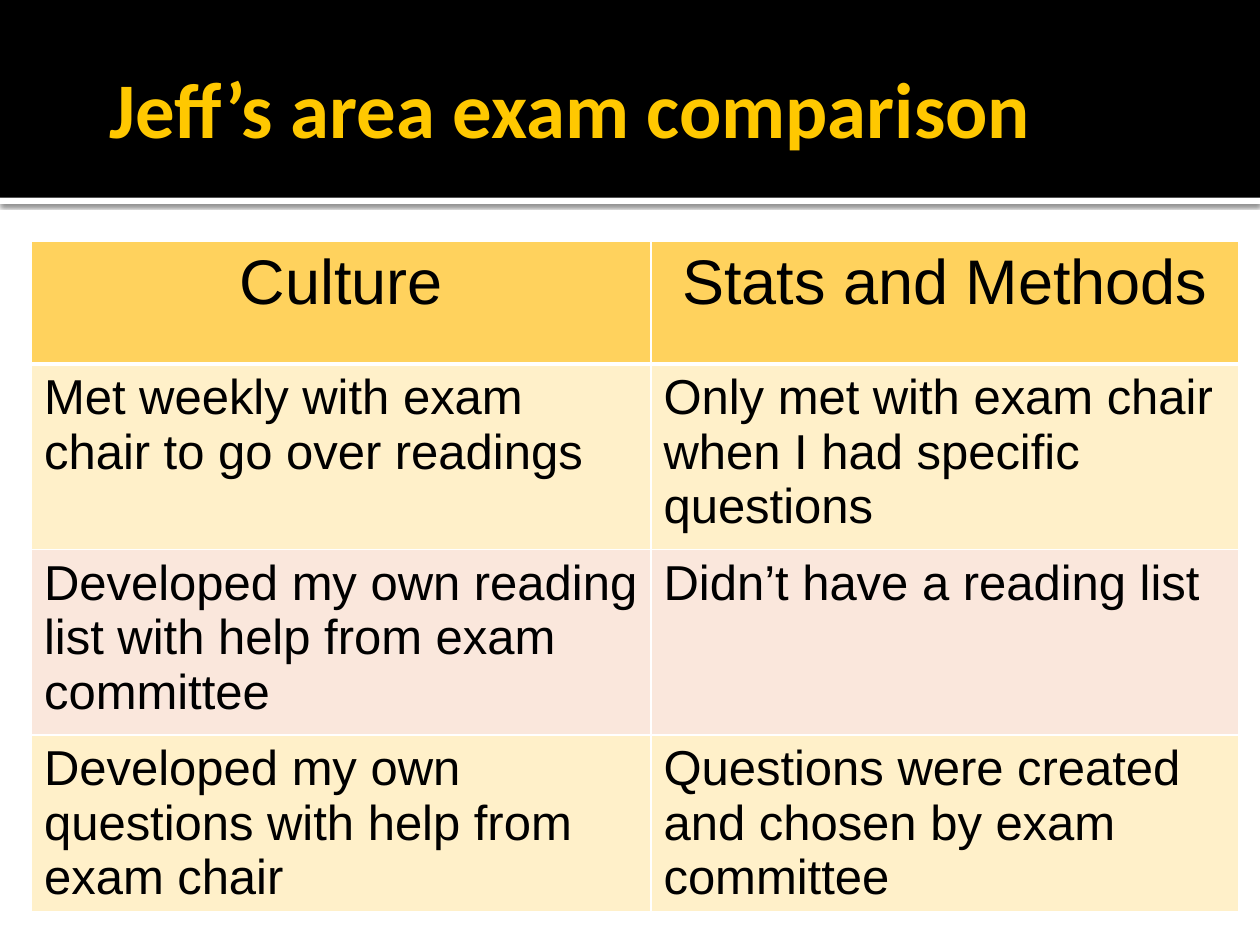
from dataclasses import dataclass

from pptx import Presentation
from pptx.dml.color import RGBColor as Color
from pptx.enum.shapes import MSO_SHAPE as Shape
from pptx.enum.text import MSO_ANCHOR as Anchor, MSO_AUTO_SIZE as AutoSize, PP_ALIGN as Align
from pptx.oxml import parse_xml
from pptx.oxml.ns import nsdecls
from pptx.util import Pt


@dataclass(frozen=True)
class Theme:
    white: str = "FFFFFF"
    black: str = "000000"
    title: str = "FFC800"
    header: str = "FFD25D"
    bands: tuple = ("FFF0C9", "FAE7DC")
    title_font: str = "Calibri"
    table_font: str = "Arial"
    title_size: float = 45
    header_size: float = 36
    body_size: float = 28


THEME = Theme()
HEADERS = ("Culture", "Stats and Methods")
COMPARISONS = (
    ("Met weekly with exam chair to go over readings",
     "Only met with exam chair when I had specific questions"),
    ("Developed my own reading list with help from exam committee",
     "Didn’t have a reading list"),
    ("Developed my own questions with help from exam chair",
     "Questions were created and chosen by exam committee"),
)


def write(frame, text, *, font, size, color, bold=False, align=Align.LEFT):
    para = frame.paragraphs[0]
    para.alignment = align
    span = para.add_run()
    span.text = text
    span.font.name = font
    span.font.size = Pt(size)
    span.font.bold = bold
    span.font.color.rgb = Color.from_string(color)


def set_borders(cell, color, **widths):
    """Draw the sides L, R, T and B in the given point widths; 0 hides a side."""
    properties = cell._tc.get_or_add_tcPr()
    for index, side in enumerate("LRTB"):
        width = widths.get(side, 1)
        fill = (f'<a:solidFill><a:srgbClr val="{color}"/></a:solidFill>'
                if width else "<a:noFill/>")
        properties.insert(index, parse_xml(
            f'<a:ln{side} {nsdecls("a")} w="{Pt(width)}">{fill}</a:ln{side}>'))


class SlideBuilder:
    def __init__(self, deck, theme):
        self.theme = theme
        self.slide = deck.slides.add_slide(deck.slide_layouts[5])

    def band(self, top, height, color, shadow=False):
        """Add a full-width stripe behind the title."""
        shapes = self.slide.shapes
        box = shapes.add_shape(Shape.RECTANGLE, 0, Pt(top), Pt(720), Pt(height))
        box.fill.solid()
        box.fill.fore_color.rgb = Color.from_string(color)
        box.line.fill.background()
        box.shadow.inherit = False
        if shadow:
            effects = box._element.spPr.find(".//{*}effectLst")
            effects.append(parse_xml(
                f'<a:outerShdw {nsdecls("a")} blurRad="{Pt(2.5)}" dist="{Pt(0.8)}" '
                f'dir="5400000" rotWithShape="0"><a:srgbClr val="{self.theme.black}">'
                '<a:alpha val="60000"/></a:srgbClr></a:outerShdw>'))
        shapes.title._element.addprevious(box._element)

    def title(self, text, left, top, width, height):
        box = self.slide.shapes.title
        box.left, box.top, box.width, box.height = map(Pt, (left, top, width, height))
        frame = box.text_frame
        frame.word_wrap = True
        frame.auto_size = AutoSize.NONE
        frame.vertical_anchor = Anchor.MIDDLE
        frame.margin_left = Pt(7.2)
        frame.margin_top = frame.margin_right = frame.margin_bottom = Pt(3.6)
        write(frame, text, font=self.theme.title_font, size=self.theme.title_size,
              color=self.theme.title, bold=True, align=Align.CENTER)

    def table(self, rows, left, top, widths, heights):
        theme = self.theme
        table = self.slide.shapes.add_table(
            len(rows), len(widths), Pt(left), Pt(top),
            Pt(sum(widths)), Pt(sum(heights))).table
        for column, width in zip(table.columns, widths):
            column.width = Pt(width)
        for row, height in zip(table.rows, heights):
            row.height = Pt(height)
        for row_index, texts in enumerate(rows):
            is_header = row_index == 0
            fill = theme.header if is_header else theme.bands[(row_index - 1) % 2]
            for column_index, text in enumerate(texts):
                cell = table.cell(row_index, column_index)
                cell.fill.solid()
                cell.fill.fore_color.rgb = Color.from_string(fill)
                set_borders(cell, theme.white, B=3 if is_header else 1,
                            T=0 if row_index == 1 else 1)
                write(cell.text_frame, text, font=theme.table_font, color=theme.black,
                      size=theme.header_size if is_header else theme.body_size,
                      align=Align.CENTER if is_header else Align.LEFT)


def main():
    deck = Presentation()
    deck.slide_width, deck.slide_height = Pt(720), Pt(540)
    builder = SlideBuilder(deck, THEME)
    builder.band(113, 3.6, THEME.white, shadow=True)
    builder.band(0, 113, THEME.black)
    builder.title("Jeff’s area exam comparison", 0, 12, 648, 98.6)
    builder.table((HEADERS, *COMPARISONS), 18, 138,
                  widths=(354, 336), heights=(70, 106, 106, 96.5))
    deck.save("out.pptx")


if __name__ == "__main__":
    main()
